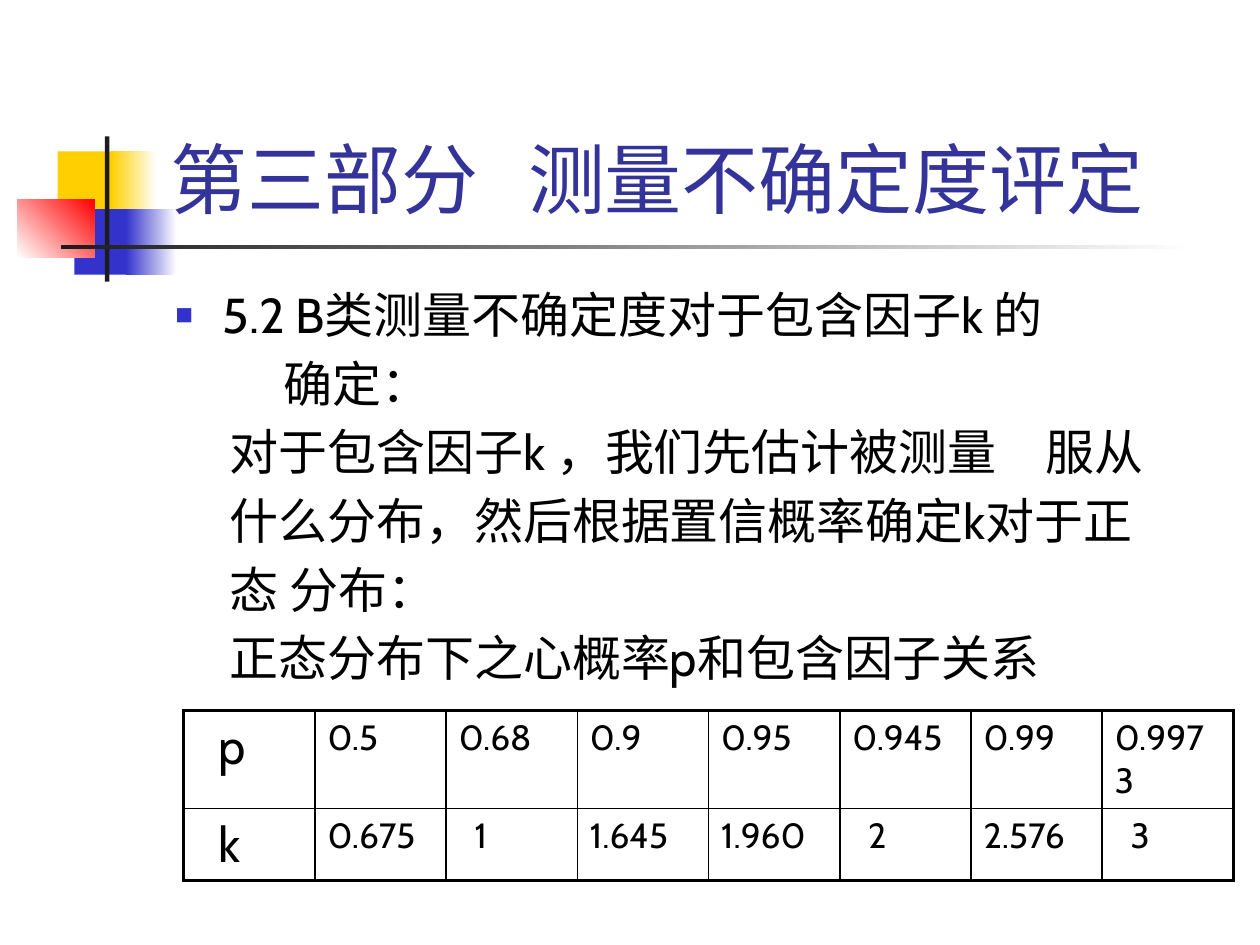
"""Build the slide on coverage factors in measurement uncertainty."""
from dataclasses import dataclass
from typing import Optional

from lxml.etree import SubElement
from pptx import Presentation
from pptx.dml.color import RGBColor
from pptx.enum.shapes import MSO_SHAPE
from pptx.enum.text import MSO_ANCHOR, MSO_AUTO_SIZE, PP_ALIGN
from pptx.oxml.ns import qn
from pptx.util import Pt

FONT = "Cabin"
BLACK, WHITE, BLUE, YELLOW = "000000", "FFFFFF", "3333CC", "FFCF01"
DARK, RED, TITLE_BLUE = "1C1C1C", "FF0000", "333399"


@dataclass
class Block:
    left: float
    top: float
    width: float
    height: float
    color: str
    end: Optional[str] = None
    angle: float = 0


@dataclass
class Line:
    text: str
    margin: float = 31
    indent: float = 0
    bullet: Optional[str] = None


@dataclass
class Entry:
    text: str
    size: float = 20
    indented: bool = False


BLOCKS = [
    Block(33, 86.5, 34.5, 37.5, YELLOW),
    Block(63.5, 86.5, 26, 37.5, YELLOW, WHITE),
    Block(42.5, 119.5, 33, 37.5, BLUE),
    Block(72, 119.5, 29, 37.5, BLUE, WHITE),
    Block(10, 114, 44, 33, WHITE, RED, 45),
    Block(60, 78, 2.5, 83, DARK),
    Block(35, 140, 648, 2.5, DARK, WHITE),
]
LINES = [
    Line("5.2\u2002B类测量不确定度对于包含因子k 的".replace("\u2002", " "), 27, -27, "■"),
    Line("确定：", 62),
    Line("对于包含因子k ，我们先估计被测量　服从"),
    Line("什么分布，然后根据置信概率确定k对于正"),
    Line("态 分布："),
    Line("正态分布下之心概率p和包含因子关系"),
]
ROWS = [
    [Entry("p", 28, True)]
    + [Entry(t) for t in ("0.5", "0.68", "0.9", "0.95", "0.945", "0.99", "0.9973")],
    [Entry("k", 28, True)]
    + [Entry(t, indented=len(t) == 1)
       for t in ("0.675", "1", "1.645", "1.960", "2", "2.576", "3")],
]


def rgb(color: str) -> RGBColor:
    """Return the colour of a hex string."""
    return RGBColor.from_string(color)


def format_runs(p, size: float, color: str) -> None:
    """Set the font of every run in a paragraph."""
    for r in p.runs:
        r.font.name = FONT
        r.font.size = Pt(size)
        r.font.color.rgb = rgb(color)


def set_indent(p, margin: float, indent: float = 0) -> None:
    """Set the left margin and first-line indent of a paragraph."""
    pPr = p._p.get_or_add_pPr()
    pPr.set("marL", str(Pt(margin)))
    pPr.set("indent", str(Pt(indent)))


def place(sp, left: float, top: float, width: float, height: float) -> None:
    """Move and size a placeholder."""
    sp.left, sp.top, sp.width, sp.height = map(Pt, (left, top, width, height))


def draw_block(s, b: Block) -> None:
    """Draw one plain or fading rectangle."""
    sp = s.shapes.add_shape(MSO_SHAPE.RECTANGLE, Pt(b.left), Pt(b.top), Pt(b.width), Pt(b.height))
    sp.shadow.inherit = False
    sp.line.fill.background()
    if b.end is None:
        sp.fill.solid()
        sp.fill.fore_color.rgb = rgb(b.color)
        return
    sp.fill.gradient()
    sp.fill.gradient_angle = b.angle
    for stop, color in zip(sp.fill.gradient_stops, (b.color, b.end)):
        stop.color.rgb = rgb(color)


def fill_title(sp) -> None:
    """Write the title with a tab stop between its two parts."""
    place(sp, 90.5, 16.5, 613.5, 115)
    tf = sp.text_frame
    tf.text = "第三部分\t测量不确定度评定"
    tf.auto_size = MSO_AUTO_SIZE.NONE
    tf.vertical_anchor = MSO_ANCHOR.BOTTOM
    p = tf.paragraphs[0]
    p.alignment = PP_ALIGN.LEFT
    tabs = SubElement(p._p.get_or_add_pPr(), qn("a:tabLst"))
    SubElement(tabs, qn("a:tab"), pos=str(Pt(204)), algn="l")
    format_runs(p, 44, TITLE_BLUE)


def fill_body(sp, lines: list[Line]) -> None:
    """Write the body lines, with a square bullet where one is given."""
    place(sp, 93, 159, 601, 324)
    tf = sp.text_frame
    tf.text = "\n".join(line.text for line in lines)
    tf.auto_size = MSO_AUTO_SIZE.NONE
    for p, line in zip(tf.paragraphs, lines):
        set_indent(p, line.margin, line.indent)
        pPr = p._p.get_or_add_pPr()
        if line.bullet:
            color = SubElement(pPr, qn("a:buClr"))
            SubElement(color, qn("a:srgbClr"), val=BLUE)
            SubElement(pPr, qn("a:buSzPct"), val="60000")
            SubElement(pPr, qn("a:buChar"), char=line.bullet)
        else:
            SubElement(pPr, qn("a:buNone"))
        format_runs(p, 28, BLACK)


def set_borders(cell, outer: dict[str, bool]) -> None:
    """Draw thick lines on outer cell sides and thin ones inside."""
    tcPr = cell._tc.get_or_add_tcPr()
    for side, thick in outer.items():
        ln = SubElement(tcPr, qn(f"a:ln{side}"), w=str(Pt(2.25 if thick else 1)))
        fill = SubElement(ln, qn("a:solidFill"))
        SubElement(fill, qn("a:srgbClr"), val=BLACK)


def draw_table(s, rows: list[list[Entry]]) -> None:
    """Draw the table of probabilities and coverage factors."""
    n_rows, n_cols = len(rows), len(rows[0])
    frame = s.shapes.add_table(n_rows, n_cols, Pt(105), Pt(406), Pt(600), Pt(86.5))
    table = frame.table
    table.first_row = table.horz_banding = False
    for row, height in zip(table.rows, (45.5, 41)):
        row.height = Pt(height)
    for i, row in enumerate(rows):
        for j, entry in enumerate(row):
            cell = table.cell(i, j)
            set_borders(cell, {"L": j == 0, "R": j == n_cols - 1,
                               "T": i == 0, "B": i == n_rows - 1})
            cell.fill.background()
            cell.text_frame.text = entry.text
            p = cell.text_frame.paragraphs[0]
            p.space_before = Pt(0.24 * entry.size)
            set_indent(p, 0.45 * entry.size if entry.indented else 0)
            format_runs(p, entry.size, BLACK)


def main() -> None:
    """Build and save the presentation."""
    prs = Presentation()
    prs.slide_width, prs.slide_height = Pt(720), Pt(540)
    s = prs.slides.add_slide(prs.slide_layouts[1])
    title, body = s.placeholders
    for block in BLOCKS:
        draw_block(s, block)
    fill_title(title)
    fill_body(body, LINES)
    for sp in (title, body):
        s.shapes.element.append(sp.element)
    draw_table(s, ROWS)
    prs.save("out.pptx")


if __name__ == "__main__":
    main()
